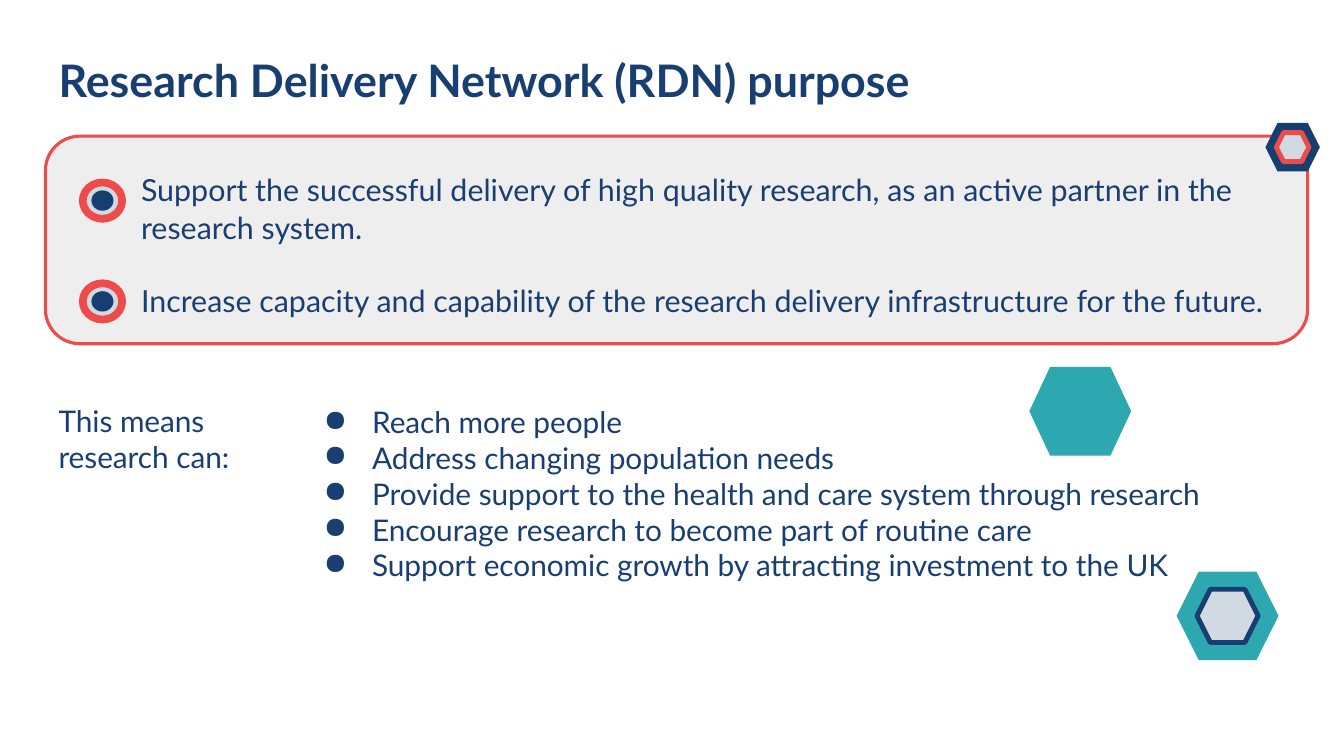
from dataclasses import dataclass

from lxml import etree
from pptx import Presentation, util as u
from pptx.dml.color import RGBColor
from pptx.enum import shapes, text
from pptx.oxml.ns import qn


@dataclass(frozen=True)
class Theme:
    font: str = "Lato"
    navy: str = "193E72"
    deep_navy: str = "173E71"
    coral: str = "EE4B4B"
    teal: str = "2DA8B0"
    mist: str = "D1D9E2"
    panel: str = "EEEEEE"
    title_size: float = 32
    purpose_size: float = 21.7
    body_size: float = 21.3


@dataclass(frozen=True)
class Box:
    left: float
    top: float
    width: float
    height: float

    def share(self, left, top, width, height):
        """Return an inner box given in percent of this one."""
        return Box(self.left + self.width * left / 100,
                   self.top + self.height * top / 100,
                   self.width * width / 100, self.height * height / 100)

    def centred(self, percent):
        margin = (100 - percent) / 2
        return self.share(margin, margin, percent, percent)

    def inches(self):
        return [u.Inches(v) for v in (self.left, self.top, self.width, self.height)]


THEME = Theme()
SLIDE = Box(0, 0, 13.33, 7.5)
HEXAGON = shapes.MSO_SHAPE.HEXAGON
OVAL = shapes.MSO_SHAPE.OVAL


def add_shape(slide, kind, box, fill, line=None, line_width=0):
    shape = slide.shapes.add_shape(kind, *box.inches())
    shape.shadow.inherit = False
    shape.fill.solid()
    shape.fill.fore_color.rgb = RGBColor.from_string(fill)
    if line:
        shape.line.color.rgb = RGBColor.from_string(line)
        shape.line.width = u.Pt(line_width)
    else:
        shape.line.fill.background()
    return shape


def add_bullet(paragraph):
    properties = paragraph._p.get_or_add_pPr()
    properties.set("marL", str(u.Inches(0.67)))
    properties.set("indent", str(u.Inches(-0.48)))
    colour = etree.SubElement(properties, qn("a:buClr"))
    etree.SubElement(colour, qn("a:srgbClr")).set("val", THEME.navy)
    etree.SubElement(properties, qn("a:buChar")).set("char", "●")


def write(shape, lines, size, bold=False, bullets=False, inset=(0.13, 0.13),
          anchor=text.MSO_ANCHOR.TOP, spacing=1.0, gap=0):
    frame = shape.text_frame
    frame.word_wrap = True
    frame.auto_size = text.MSO_AUTO_SIZE.NONE
    frame.vertical_anchor = anchor
    frame.margin_left = frame.margin_right = u.Inches(inset[0])
    frame.margin_top = frame.margin_bottom = u.Inches(inset[1])
    frame.text = "\n".join(lines)
    for index, paragraph in enumerate(frame.paragraphs):
        if bullets:
            add_bullet(paragraph)
        paragraph.alignment = text.PP_ALIGN.LEFT
        paragraph.line_spacing = spacing
        paragraph.space_before = u.Pt(gap if index else 0)
        for run in paragraph.runs:
            run.font.name = THEME.font
            run.font.size = u.Pt(size)
            run.font.bold = bold
            run.font.color.rgb = RGBColor.from_string(THEME.navy)


def add_text(slide, box, lines, size, **style):
    write(slide.shapes.add_textbox(*box.inches()), lines, size, **style)


def add_title(slide, box):
    title = slide.shapes.title
    title.left, title.top, title.width, title.height = box.inches()
    write(title, ["Research Delivery Network (RDN) purpose"], THEME.title_size,
          bold=True, anchor=text.MSO_ANCHOR.MIDDLE)


def add_nested_hexagon(slide, box, outer, border):
    add_shape(slide, HEXAGON, box, outer)
    add_shape(slide, HEXAGON, box.centred(60), THEME.mist, border, 3.5)


def add_target(slide, box):
    add_shape(slide, OVAL, box, THEME.mist, THEME.coral, 5.5)
    add_shape(slide, OVAL, box.centred(56), THEME.deep_navy)


def add_purpose_panel(slide, box):
    add_shape(slide, shapes.MSO_SHAPE.ROUNDED_RECTANGLE, box,
              THEME.panel, THEME.coral, 2.25)
    add_text(slide, box.share(6.79, 1.94, 94.65, 100), [
        "Support the successful delivery of high quality research, "
        "as an active partner in the research system.",
        "Increase capacity and capability of the research delivery "
        "infrastructure for the future.",
    ], THEME.purpose_size, inset=(0.1, 0.05), anchor=text.MSO_ANCHOR.MIDDLE,
        spacing=1.05, gap=25)
    # One target beside each aim
    for top in (22.33, 70.87):
        add_target(slide, box.share(2.96, top, 3.12, 17.48))
    # Corner badge
    add_nested_hexagon(slide, box.share(96.65, -6.31, 4.31, 23.3),
                       THEME.deep_navy, THEME.coral)


def add_outcomes(slide, box):
    add_text(slide, box.share(0, 0, 17.6, 46.8),
             ["This means research can:"], THEME.body_size)
    add_text(slide, box.share(20.17, 0.46, 79.83, 99.54), [
        "Reach more people",
        "Address changing population needs",
        "Provide support to the health and care system through research",
        "Encourage research to become part of routine care",
        "Support economic growth by attracting investment to the UK",
    ], THEME.body_size, bullets=True)


def add_decoration(slide, box):
    plain = add_shape(slide, HEXAGON, box.share(76.59, 48.53, 7.58, 11.73), THEME.teal)
    plain.adjustments[0] = 0.234
    add_nested_hexagon(slide, box.share(87.55, 75.6, 7.58, 11.73),
                       THEME.teal, THEME.deep_navy)


def main():
    presentation = Presentation()
    presentation.slide_width = u.Inches(SLIDE.width)
    presentation.slide_height = u.Inches(SLIDE.height)
    slide = presentation.slides.add_slide(presentation.slide_layouts[5])
    add_title(slide, SLIDE.share(3.38, 5.33, 91, 10.53))
    add_purpose_panel(slide, SLIDE.share(3.38, 18, 93.92, 27.47))
    add_decoration(slide, SLIDE)
    add_outcomes(slide, SLIDE.share(3.38, 51.6, 90.77, 29.07))
    presentation.save("out.pptx")


if __name__ == "__main__":
    main()
